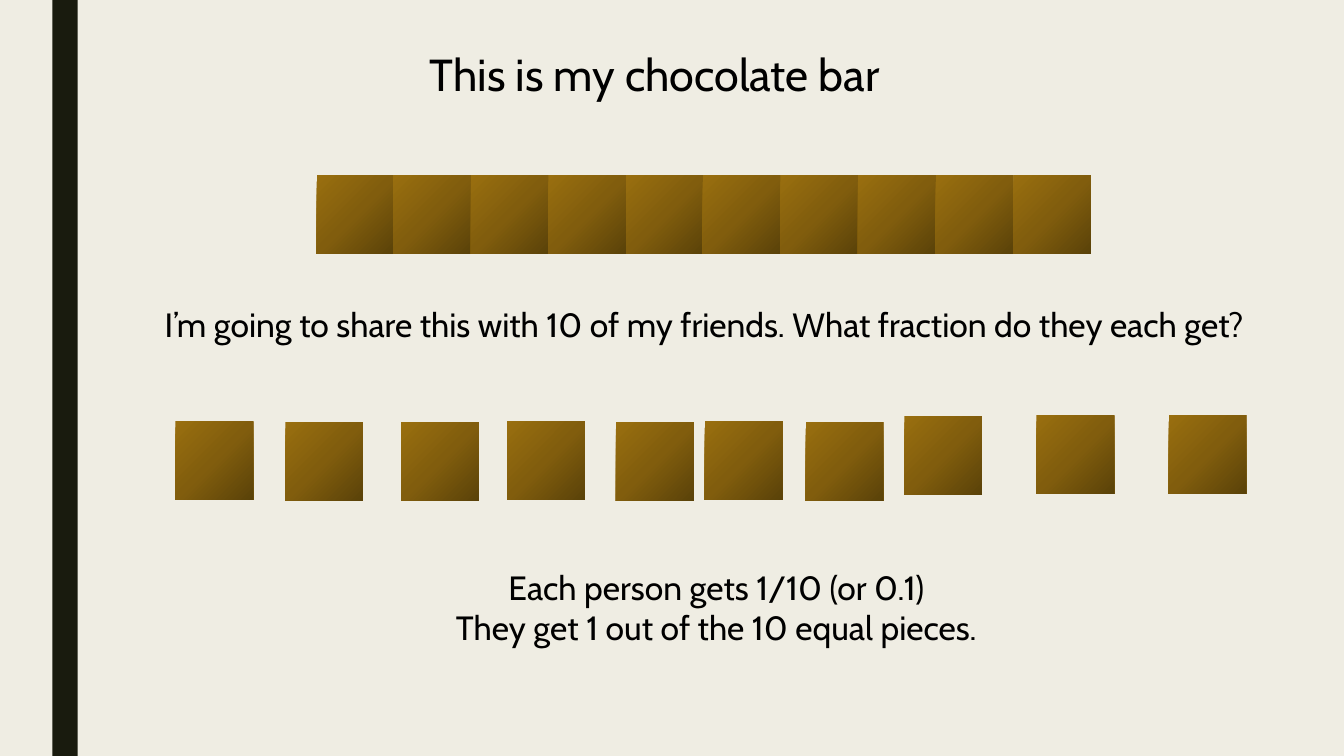
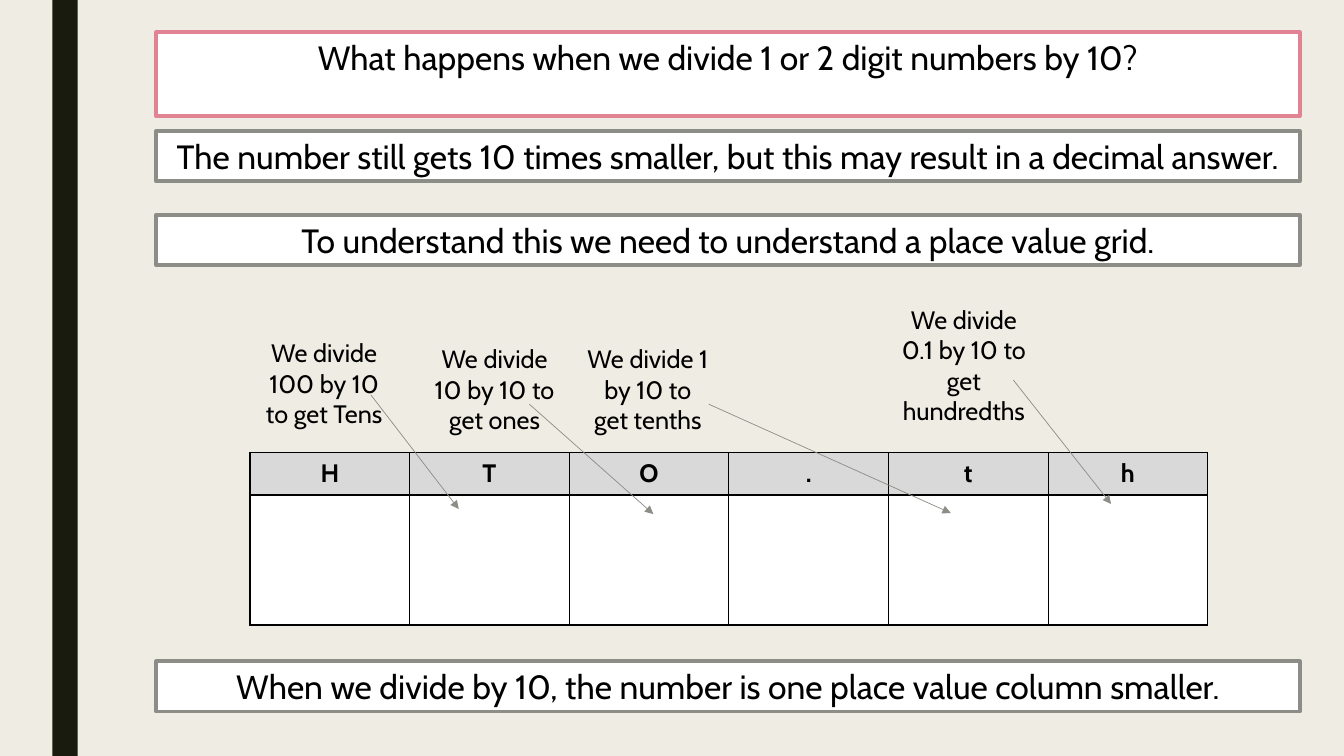
from lxml import etree
from pptx import Presentation
from pptx.dml.color import RGBColor
from pptx.enum.shapes import MSO_CONNECTOR, MSO_SHAPE
from pptx.enum.text import MSO_ANCHOR, MSO_AUTO_SIZE, PP_ALIGN
from pptx.oxml import parse_xml
from pptx.oxml.ns import nsdecls, qn
from pptx.util import Pt

PX = 9144
TITLE_ONLY = 5
RECTANGLE = MSO_SHAPE.RECTANGLE
STRAIGHT = MSO_CONNECTOR.STRAIGHT
CENTER = PP_ALIGN.CENTER
TOP = MSO_ANCHOR.TOP
FIT_SHAPE = MSO_AUTO_SIZE.SHAPE_TO_FIT_TEXT

FONT = "Cabin"
PAPER = "EFEDE3"
BAND = "191B0E"
BLACK = "000000"
WHITE = "FFFFFF"
GREY = "8C8D86"
PINK = "E28394"
HEADER = "D9D9D9"
CHOCOLATE = ((0, "5A4209"), (50, "815D0D"), (100, "996F0F"))

SQUARE_WIDTH, SQUARE_HEIGHT = 77, 78
BAR_LEFT, BAR_TOP, BAR_SPAN, PIECES = 314, 174, 691, 10
SHARED_PIECES = (
    (174, 418), (283, 419), (398, 419), (503, 418), (611, 419),
    (699, 418), (799, 419), (897, 413), (1028, 412), (1159, 412),
)

BOX_LEFT, BOX_WIDTH, BOX_HEIGHT = 155, 1134, 50
STATEMENTS = (
    (130, "The number still gets 10 times smaller, but this may result in a decimal answer."),
    (213, "To understand this we need to understand a place value grid."),
    (656, "When we divide by 10, the number is one place value column smaller."),
)
PLACES = ("H", "T", "O", ".", "t", "h")
GRID_BOX = (248, 449, 950, 171)
GRID_ROWS = (42, 129)
STEPS = (
    ("We divide 100 by 10 to get Tens", (251, 330, 141, 101), (368, 392, 455, 505)),
    ("We divide 10 by 10 to get ones", (420, 336, 141, 101), (525, 401, 648, 510)),
    ("We divide 1 by 10 to get tenths", (572, 336, 141, 101), (703, 401, 943, 509)),
    ("We divide 0.1 by 10 to get hundredths", (879, 297, 154, 131), (1005, 377, 1102, 500)),
)


def emu(*lengths):
    return [length * PX for length in lengths]


def color(value):
    return RGBColor.from_string(value)


def fill_solid(target, value):
    target.fill.solid()
    target.fill.fore_color.rgb = color(value)


def outline(shape, value, width):
    shape.line.color.rgb = color(value)
    shape.line.width = Pt(width)


def format_text(text_frame, size, bold=False):
    for paragraph in text_frame.paragraphs:
        paragraph.alignment = CENTER
        for run in paragraph.runs:
            run.font.name = FONT
            run.font.size = Pt(size)
            run.font.bold = bold
            run.font.color.rgb = color(BLACK)


def write(shape, text, size, wrap=True):
    text_frame = shape.text_frame
    text_frame.text = text
    text_frame.word_wrap = wrap
    text_frame.auto_size = FIT_SHAPE
    text_frame.vertical_anchor = TOP
    format_text(text_frame, size)


def add_rectangle(slide, *box):
    shape = slide.shapes.add_shape(RECTANGLE, *emu(*box))
    shape.shadow.inherit = False
    shape.line.fill.background()
    return shape


def add_text(slide, text, box, size):
    write(slide.shapes.add_textbox(*emu(*box)), text, size)


def set_title(slide, text, box, size, wrap=True):
    title = slide.shapes.title
    title.left, title.top, title.width, title.height = emu(*box)
    write(title, text, size, wrap)
    return title


def frame_box(shape, line_color):
    fill_solid(shape, WHITE)
    outline(shape, line_color, 2.75)


def add_statement(slide, top, text):
    box = add_rectangle(slide, BOX_LEFT, top, BOX_WIDTH, BOX_HEIGHT)
    frame_box(box, GREY)
    write(box, text, 24)


def add_square(slide, left, top):
    square = add_rectangle(slide, left, top, SQUARE_WIDTH, SQUARE_HEIGHT)
    square.fill.background()
    stops = "".join(
        f'<a:gs pos="{position * 1000}"><a:srgbClr val="{value}"/></a:gs>'
        for position, value in CHOCOLATE
    )
    gradient = parse_xml(
        f'<a:gradFill {nsdecls("a")} rotWithShape="1"><a:gsLst>{stops}</a:gsLst>'
        '<a:path path="circle"><a:fillToRect l="100000" t="100000"/></a:path>'
        '</a:gradFill>'
    )
    properties = square.element.spPr
    properties.replace(properties.find(qn("a:noFill")), gradient)


def add_arrow(slide, points):
    arrow = slide.shapes.add_connector(STRAIGHT, *emu(*points))
    outline(arrow, GREY, 0.5)
    properties = arrow.element.spPr
    etree.SubElement(properties.find(qn("a:ln")), qn("a:tailEnd"), type="triangle")
    etree.SubElement(properties, qn("a:effectLst"))


def add_borders(cell):
    properties = cell._tc.get_or_add_tcPr()
    for side in ("lnL", "lnR", "lnT", "lnB"):
        properties.append(parse_xml(
            f'<a:{side} {nsdecls("a")} w="{Pt(1)}"><a:solidFill>'
            f'<a:srgbClr val="{BLACK}"/></a:solidFill></a:{side}>'
        ))


def add_place_value_grid(slide):
    table = slide.shapes.add_table(len(GRID_ROWS), len(PLACES), *emu(*GRID_BOX)).table
    table.horz_banding = False
    for row, height in zip(table.rows, GRID_ROWS):
        row.height = height * PX
    for column, place in enumerate(PLACES):
        header, body = table.cell(0, column), table.cell(1, column)
        header.text_frame.text = place
        format_text(header.text_frame, 18, bold=True)
        for cell, value in ((header, HEADER), (body, WHITE)):
            add_borders(cell)
            fill_solid(cell, value)


def add_slide(presentation):
    return presentation.slides.add_slide(presentation.slide_layouts[TITLE_ONLY])


def style_master(presentation, slide):
    master = presentation.slide_master
    fill_solid(master.background, PAPER)
    band = add_rectangle(slide, 52, 0, 25, 750)
    fill_solid(band, BAND)
    band.element.nvSpPr.cNvPr.set("id", "100")
    master.shapes.element.insert(2, band.element)


def build_chocolate_slide(slide):
    set_title(slide, "This is my chocolate bar", (413, 41, 473, 64), 32, wrap=False)
    for index in range(PIECES):
        add_square(slide, BAR_LEFT + index * BAR_SPAN // (PIECES - 1), BAR_TOP)
    add_text(
        slide,
        "I’m going to share this with 10 of my friends. What fraction do they each get?",
        (137, 297, 1123, 50), 24,
    )
    for left, top in SHARED_PIECES:
        add_square(slide, left, top)
    add_text(
        slide,
        "Each person gets 1/10 (or 0.1)\nThey get 1 out of the 10 equal pieces.",
        (149, 557, 1123, 91), 24,
    )


def build_division_slide(slide):
    title = set_title(
        slide, "What happens when we divide 1 or 2 digit numbers by 10?",
        (BOX_LEFT, 32, BOX_WIDTH, BOX_HEIGHT), 24,
    )
    frame_box(title, PINK)
    for top, text in STATEMENTS:
        add_statement(slide, top, text)
    add_place_value_grid(slide)
    for text, box, points in STEPS:
        add_text(slide, text, box, 18)
        add_arrow(slide, points)


def main():
    presentation = Presentation()
    presentation.slide_width, presentation.slide_height = emu(1333, 750)
    chocolate_slide = add_slide(presentation)
    style_master(presentation, chocolate_slide)
    build_chocolate_slide(chocolate_slide)
    build_division_slide(add_slide(presentation))
    presentation.save("out.pptx")


if __name__ == "__main__":
    main()
